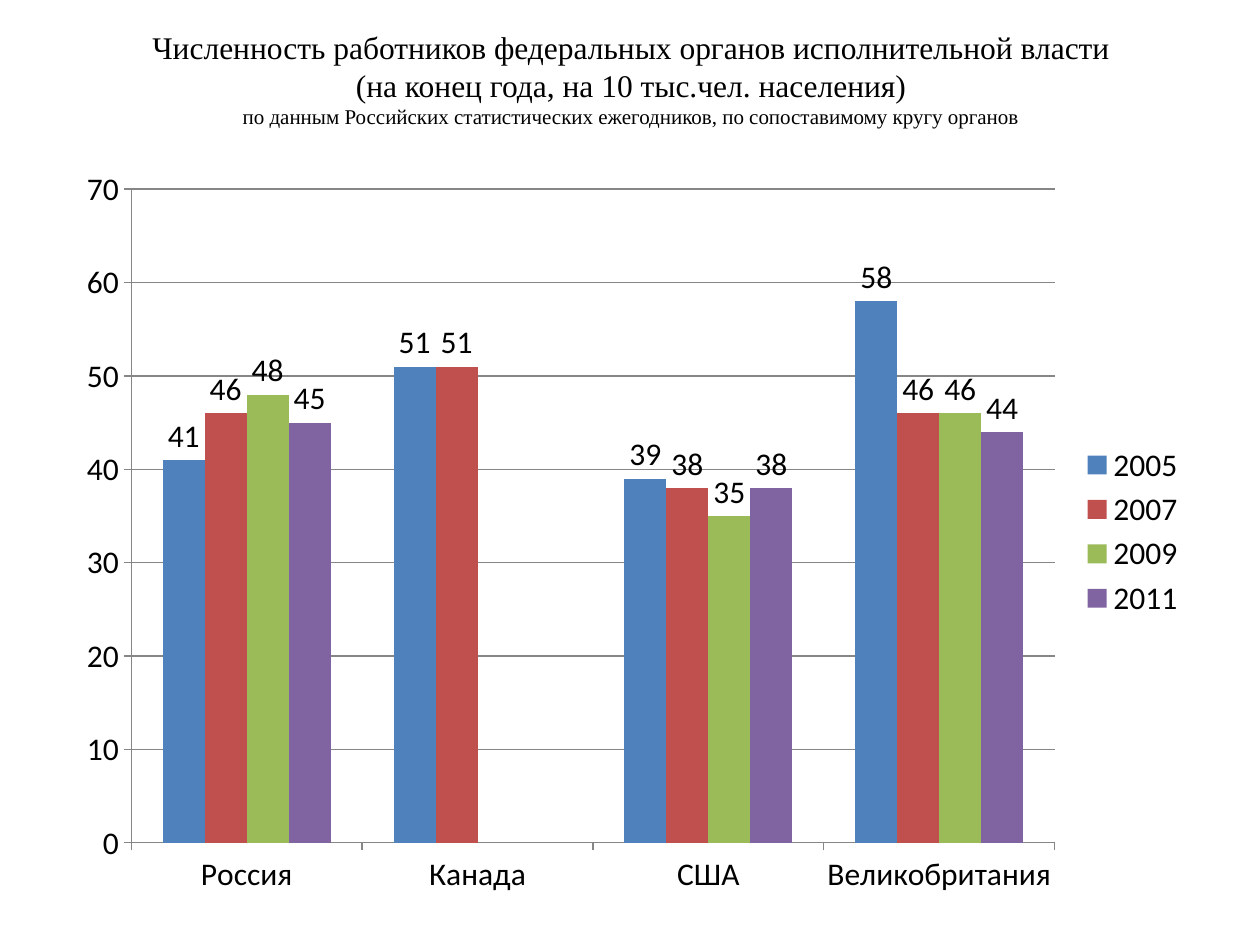
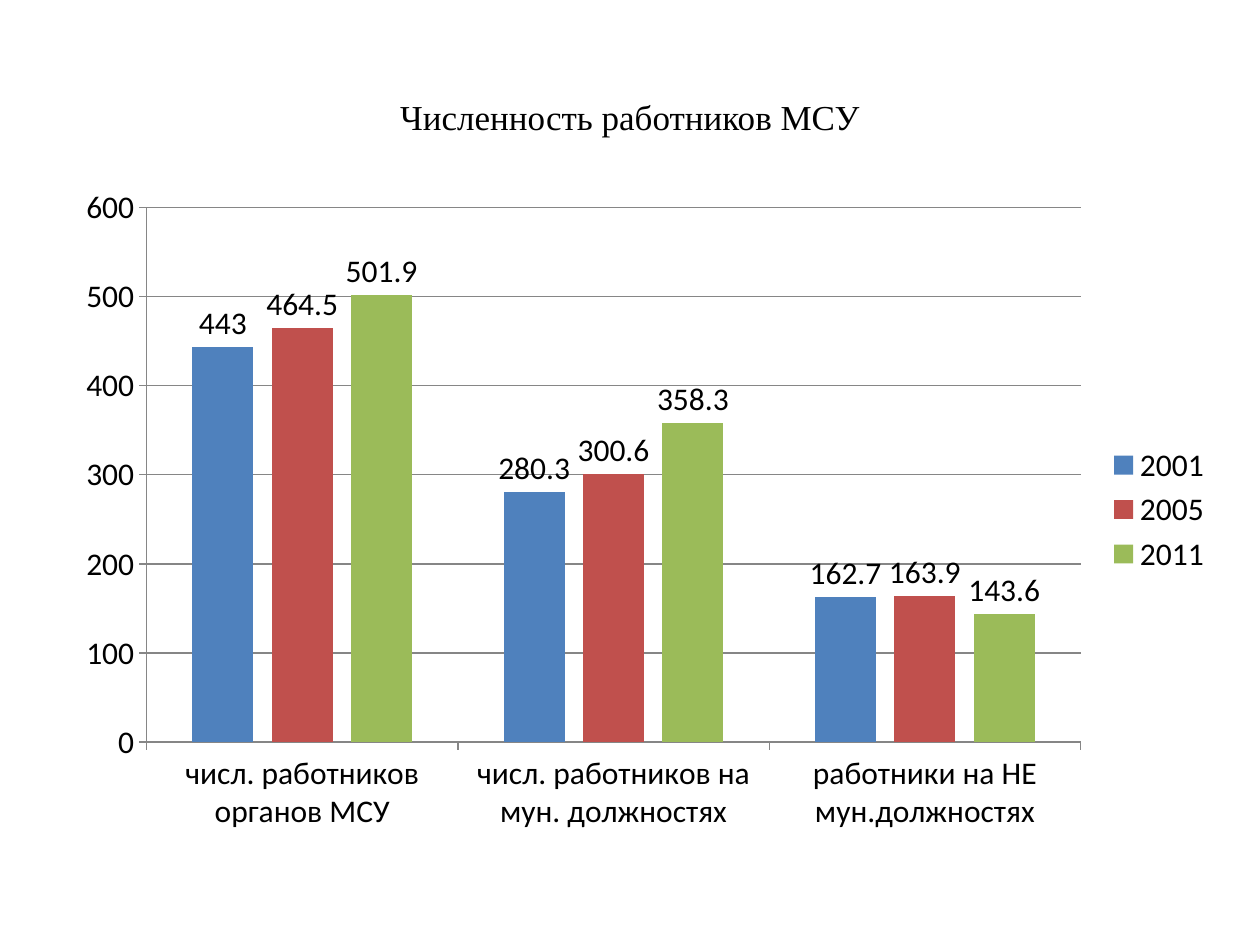
from typing import NamedTuple

from pptx import Presentation
from pptx.chart.data import CategoryChartData
from pptx.dml.color import RGBColor
from pptx.enum.chart import (XL_CHART_TYPE, XL_LABEL_POSITION,
                             XL_LEGEND_POSITION, XL_TICK_MARK)
from pptx.enum.text import MSO_ANCHOR, MSO_AUTO_SIZE, PP_ALIGN
from pptx.util import Inches, Pt

COLUMNS = XL_CHART_TYPE.COLUMN_CLUSTERED
ABOVE = XL_LABEL_POSITION.OUTSIDE_END
RIGHT = XL_LEGEND_POSITION.RIGHT
TICK_OUT, TICK_NONE = XL_TICK_MARK.OUTSIDE, XL_TICK_MARK.NONE
MIDDLE, CENTER = MSO_ANCHOR.MIDDLE, PP_ALIGN.CENTER
NO_FIT = MSO_AUTO_SIZE.NONE

# Shared style
WIDTH, HEIGHT = Inches(10), Inches(7.5)
TITLE_ONLY = 5
BLACK = RGBColor(0x00, 0x00, 0x00)
WHITE = RGBColor(0xFF, 0xFF, 0xFF)
GRAY = RGBColor(0x86, 0x86, 0x86)
FILLS = (RGBColor(0x4F, 0x81, 0xBD), RGBColor(0xC0, 0x50, 0x4D),
         RGBColor(0x9B, 0xBB, 0x59), RGBColor(0x80, 0x64, 0xA2))
SERIF, SANS = "Times New Roman", "Calibri"


class Box(NamedTuple):
    """A frame in percent of the slide's width and height."""
    left: float
    top: float
    width: float
    height: float

    def place(self) -> tuple[int, int, int, int]:
        return (int(WIDTH * self.left / 100), int(HEIGHT * self.top / 100),
                int(WIDTH * self.width / 100), int(HEIGHT * self.height / 100))


class Line(NamedTuple):
    text: str
    size: int


class Page(NamedTuple):
    title: list[Line]
    head: Box
    frame: Box
    groups: list[str]
    years: dict[str, list[float | None]]
    top: int
    step: int
    overlap: int = 0


PAGES = [
    Page(title=[Line("Численность работников федеральных органов исполнительной власти", 18),
                Line("(на конец года, на 10 тыс.чел. населения)", 18),
                Line("по данным Российских статистических ежегодников, "
                     "по сопоставимому кругу органов", 12)],
         head=Box(5.1, 0, 90, 16.67),
         frame=Box(5.1, 16.4, 90, 79.73),
         groups=["Россия", "Канада", "США", "Великобритания"],
         years={"2005": [41, 51, 39, 58],
                "2007": [46, 51, 38, 46],
                "2009": [48, None, 35, 46],
                "2011": [45, None, 38, 44]},
         top=70, step=10),
    Page(title=[Line("Численность работников МСУ", 20)],
         head=Box(5, 4, 90, 16.67),
         frame=Box(5, 18.53, 92.2, 70.8),
         groups=["числ. работников органов МСУ",
                 "числ. работников на мун. должностях",
                 "работники на НЕ мун.должностях"],
         years={"2001": [443, 280.3, 162.7],
                "2005": [464.5, 300.6, 163.9],
                "2011": [501.9, 358.3, 143.6]},
         top=600, step=100, overlap=-30),
]


def style(font, *, size: int, name: str = SANS, color: RGBColor = BLACK) -> None:
    font.size, font.name = Pt(size), name
    font.color.rgb = color


def write(shape, lines: list[Line], *, name: str = SERIF,
          color: RGBColor = BLACK, align=CENTER, anchor=MIDDLE) -> None:
    """Write lines into one paragraph, parted by line breaks."""
    frame = shape.text_frame
    frame.word_wrap, frame.auto_size = True, NO_FIT
    frame.vertical_anchor = anchor
    para = frame.paragraphs[0]
    para.alignment = align
    for place, line in enumerate(lines):
        if place:
            para.add_line_break()
        run = para.add_run()
        run.text = line.text
        style(run.font, size=line.size, name=name, color=color)


def rule(form) -> None:
    form.line.color.rgb = GRAY
    form.line.width = Pt(0.75)


def plot(slide, page: Page) -> None:
    data = CategoryChartData()
    data.categories = page.groups
    for year, values in page.years.items():
        data.add_series(year, values)
    chart = slide.shapes.add_chart(COLUMNS, *page.frame.place(), data).chart
    chart.has_title = False
    style(chart.font, size=18)

    # Legend
    chart.has_legend = True
    chart.legend.position = RIGHT
    chart.legend.include_in_layout = False

    # Axes
    for axis in (chart.category_axis, chart.value_axis):
        axis.major_tick_mark, axis.minor_tick_mark = TICK_OUT, TICK_NONE
        rule(axis.format)
    scale = chart.value_axis
    scale.minimum_scale, scale.maximum_scale = 0, page.top
    scale.major_unit = page.step
    scale.has_major_gridlines = True
    rule(scale.major_gridlines.format)

    # Bars and their values
    bars = chart.plots[0]
    bars.vary_by_categories = False
    bars.gap_width, bars.overlap = 150, page.overlap
    for series, color in zip(bars.series, FILLS):
        series.invert_if_negative = False
        series.format.fill.solid()
        series.format.fill.fore_color.rgb = color
        labels = series.data_labels
        labels.show_value, labels.position = True, ABOVE
        style(labels.font, size=18)


def build(deck, page: Page) -> None:
    slide = deck.slides.add_slide(deck.slide_layouts[TITLE_ONLY])
    slide.background.fill.solid()
    slide.background.fill.fore_color.rgb = WHITE
    title = slide.shapes.title
    title.left, title.top, title.width, title.height = page.head.place()
    write(title, page.title)
    plot(slide, page)


def main() -> None:
    deck = Presentation()
    deck.slide_width, deck.slide_height = WIDTH, HEIGHT
    for page in PAGES:
        build(deck, page)
    deck.save("out.pptx")


if __name__ == "__main__":
    main()
